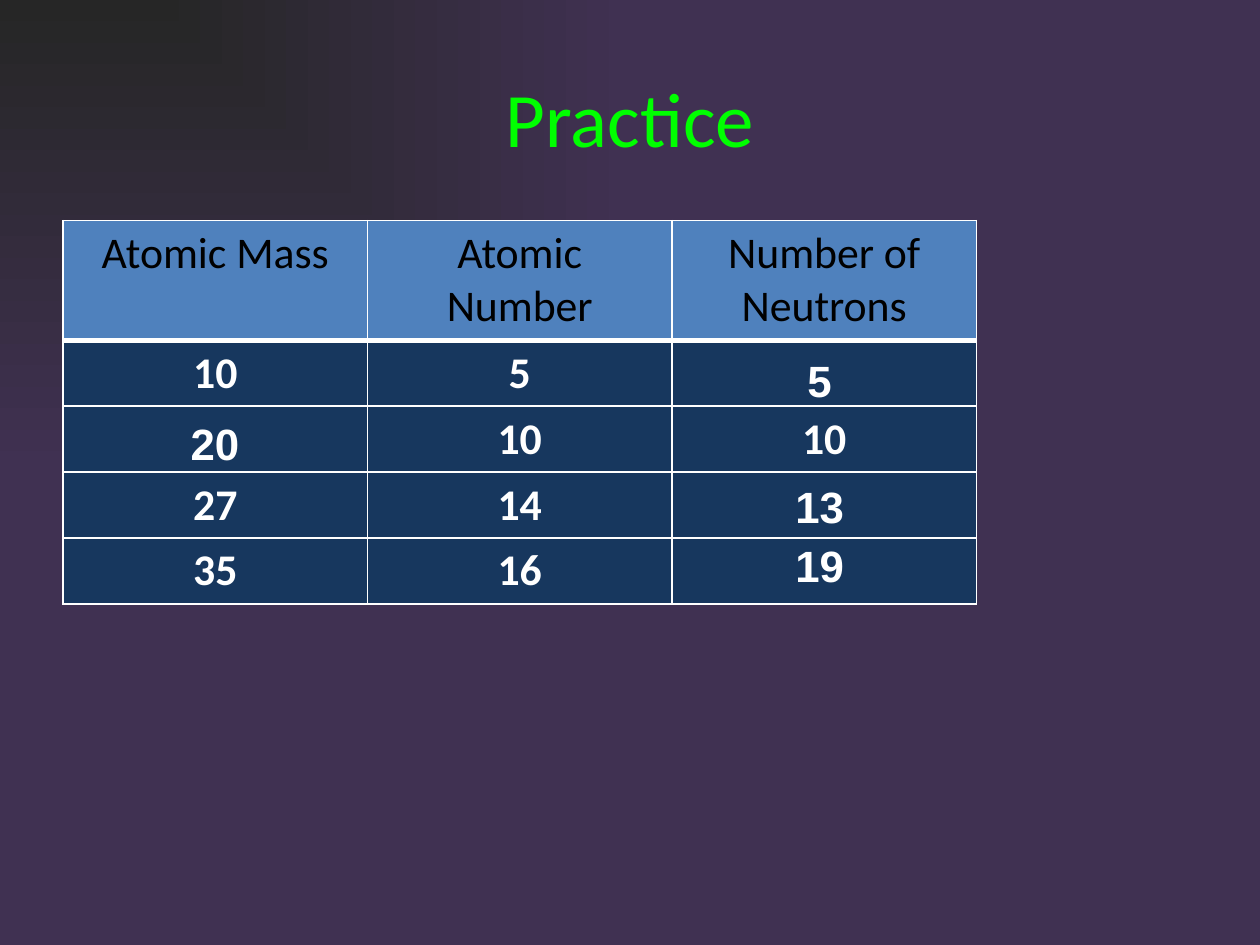
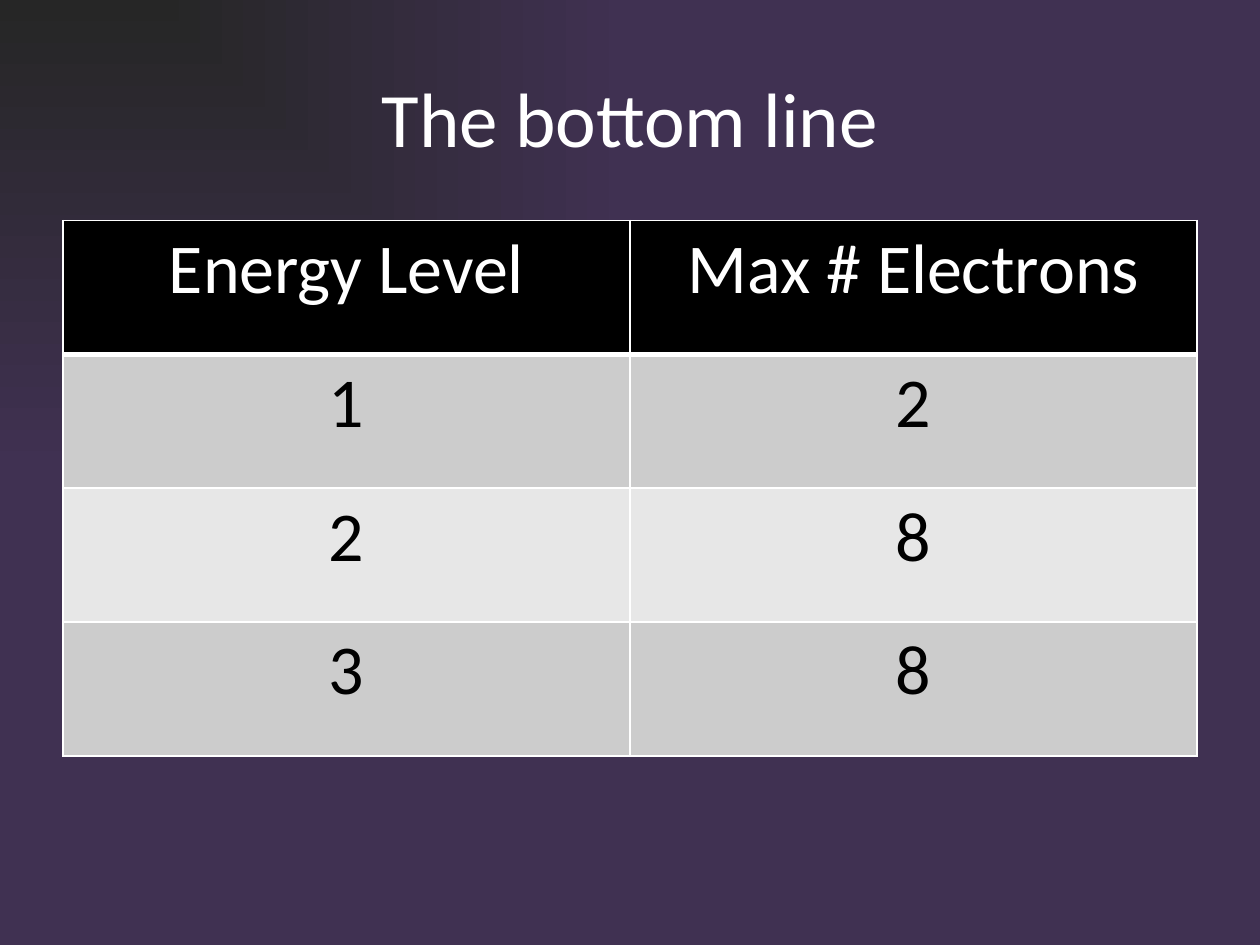
from lxml import etree
from pptx import Presentation
from pptx import util as u
from pptx.dml.color import RGBColor
from pptx.enum import text
from pptx.oxml import ns

WHITE = RGBColor(0xFF, 0xFF, 0xFF)
BLACK = RGBColor(0x00, 0x00, 0x00)
GREEN = RGBColor(0x00, 0xFF, 0x00)
CHARCOAL = RGBColor(0x26, 0x26, 0x26)
PURPLE = RGBColor(0x40, 0x31, 0x52)
BLUE = RGBColor(0x4F, 0x81, 0xBD)
NAVY = RGBColor(0x17, 0x37, 0x5E)
GREY = RGBColor(0xCC, 0xCC, 0xCC)
LIGHT_GREY = RGBColor(0xE7, 0xE7, 0xE7)


def write(frame, wording, size, color, name="Calibri", bold=False):
    paragraph = frame.paragraphs[0]
    paragraph.alignment = text.PP_ALIGN.CENTER
    run = paragraph.add_run()
    run.text = wording
    run.font.color.rgb = color
    font_format = {"size": u.Pt(size), "name": name, "bold": bold}
    for attribute, value in font_format.items():
        setattr(run.font, attribute, value)


def add_borders(cell, bottom_width):
    properties = cell._tc.get_or_add_tcPr()
    for side, width in {"L": 1, "R": 1, "T": 1, "B": bottom_width}.items():
        line = etree.SubElement(properties, ns.qn(f"a:ln{side}"), w=str(u.Pt(width)))
        fill = etree.SubElement(line, ns.qn("a:solidFill"))
        etree.SubElement(fill, ns.qn("a:srgbClr"), val=str(WHITE))


presentation = Presentation()
presentation.slide_width = u.Inches(10)
presentation.slide_height = u.Inches(7.5)

master = presentation.slide_master
background = master.background.fill
background.gradient()
for stop, color in zip(background.gradient_stops, (CHARCOAL, PURPLE)):
    stop.color.rgb = color
gradient = master.element.find(".//" + ns.qn("a:gradFill"))
gradient.remove(gradient.find(ns.qn("a:lin")))
shade = etree.SubElement(gradient, ns.qn("a:path"), path="rect")
etree.SubElement(shade, ns.qn("a:fillToRect"), r="100000", b="100000")

lessons = [
    {
        "title": "Practice", "title_color": GREEN, "width": 7.25,
        "heights": [0.95] + [0.52] * 4, "size": 25, "bold_body": True,
        "header_fill": BLUE, "header_color": BLACK,
        "body_fills": [NAVY], "body_color": WHITE,
        "rows": [
            ("Atomic Mass", "Atomic Number", "Number of Neutrons"),
            ("10", "5", ""),
            ("", "10", "10"),
            ("27", "14", ""),
            ("35", "16", ""),
        ],
        "answers": [("5", 6.17, 2.76), ("20", 1.37, 3.26),
                    ("13", 6.17, 3.76), ("19", 6.17, 4.23)],
    },
    {
        "title": "The bottom line", "title_color": WHITE, "width": 9,
        "heights": [4.25 / 4] * 4, "size": 40, "bold_body": False,
        "header_fill": BLACK, "header_color": WHITE,
        "body_fills": [GREY, LIGHT_GREY], "body_color": BLACK,
        "rows": [
            ("Energy Level", "Max # Electrons"),
            ("1", "2"),
            ("2", "8"),
            ("3", "8"),
        ],
        "answers": [],
    },
]

for lesson in lessons:
    slide = presentation.slides.add_slide(presentation.slide_layouts[5])
    title = slide.shapes.title
    title_place = {"left": 0.5, "top": 0.3, "width": 9, "height": 1.25}
    for attribute, value in title_place.items():
        setattr(title, attribute, u.Inches(value))
    title.text_frame.vertical_anchor = text.MSO_ANCHOR.MIDDLE
    write(title.text_frame, lesson["title"], 44, lesson["title_color"])

    rows = lesson["rows"]
    heights = lesson["heights"]
    table = slide.shapes.add_table(
        len(rows), len(rows[0]), u.Inches(0.5), u.Inches(1.75),
        u.Inches(lesson["width"]), u.Inches(sum(heights))).table
    table.horz_banding = False
    for row_index, (row, height) in enumerate(zip(rows, heights)):
        table.rows[row_index].height = u.Inches(height)
        header = row_index == 0
        fills = lesson["body_fills"]
        fill = lesson["header_fill"] if header else fills[(row_index - 1) % len(fills)]
        color = lesson["header_color"] if header else lesson["body_color"]
        for column_index, wording in enumerate(row):
            cell = table.cell(row_index, column_index)
            add_borders(cell, 3 if header else 1)
            cell.fill.solid()
            cell.fill.fore_color.rgb = fill
            if wording:
                write(cell.text_frame, wording, lesson["size"], color,
                      bold=lesson["bold_body"] and not header)

    for wording, left, top in lesson["answers"]:
        answer = slide.shapes.add_textbox(
            u.Inches(left), u.Inches(top), u.Inches(0.67), u.Inches(0.52))
        answer.text_frame.word_wrap = True
        answer.text_frame.auto_size = text.MSO_AUTO_SIZE.SHAPE_TO_FIT_TEXT
        write(answer.text_frame, wording, 25, WHITE, "Arial", True)

presentation.save("out.pptx")
